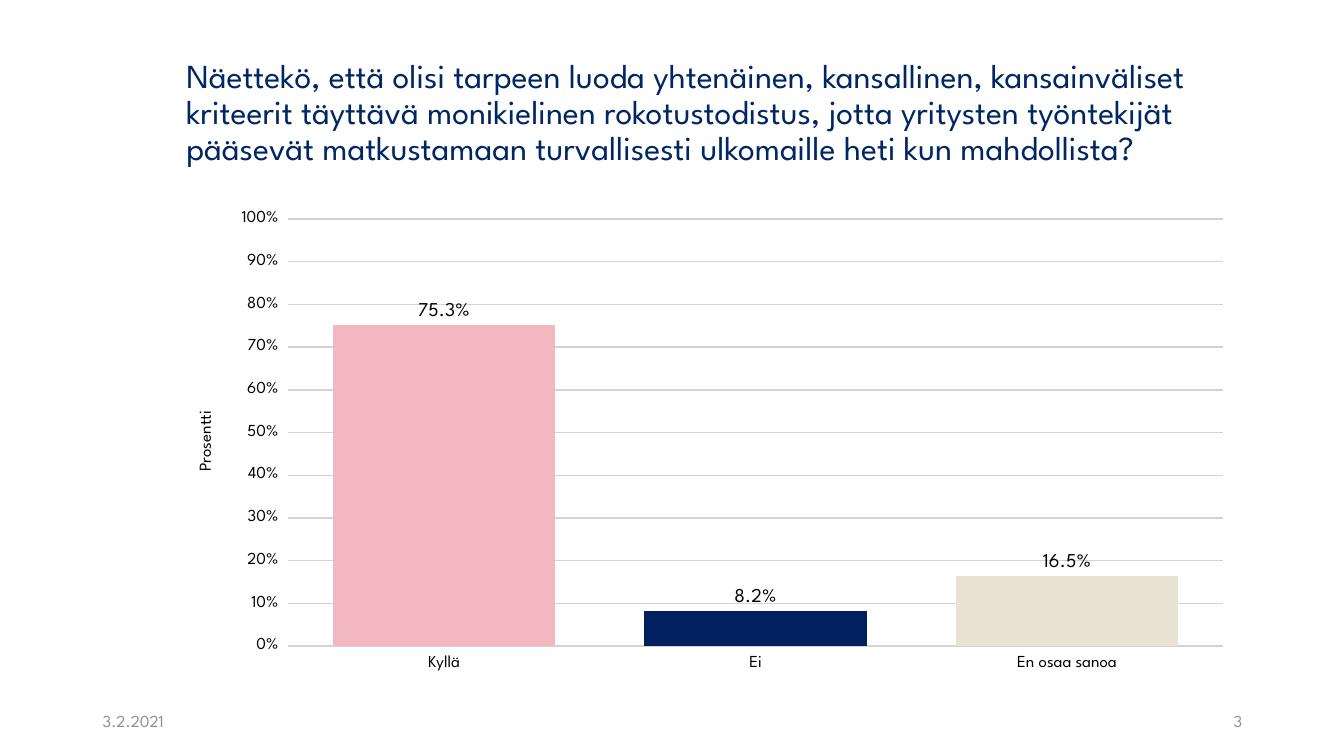
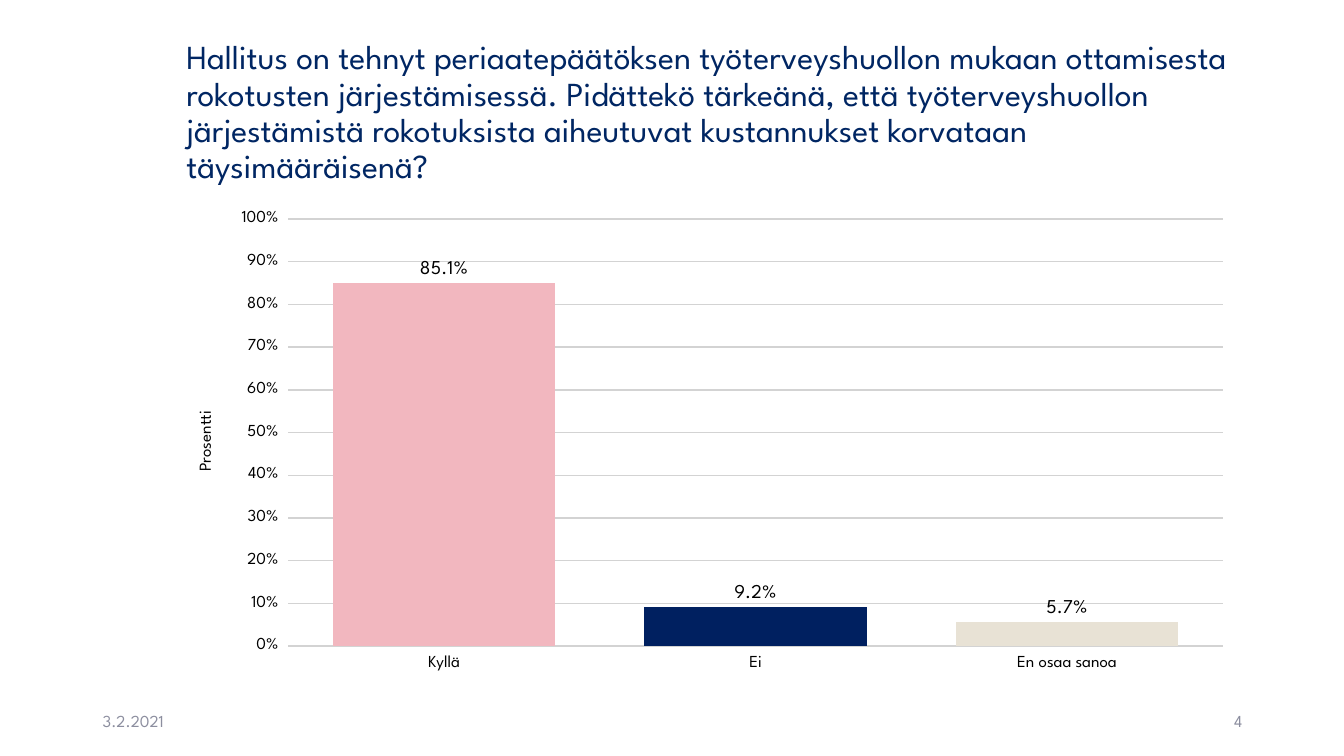
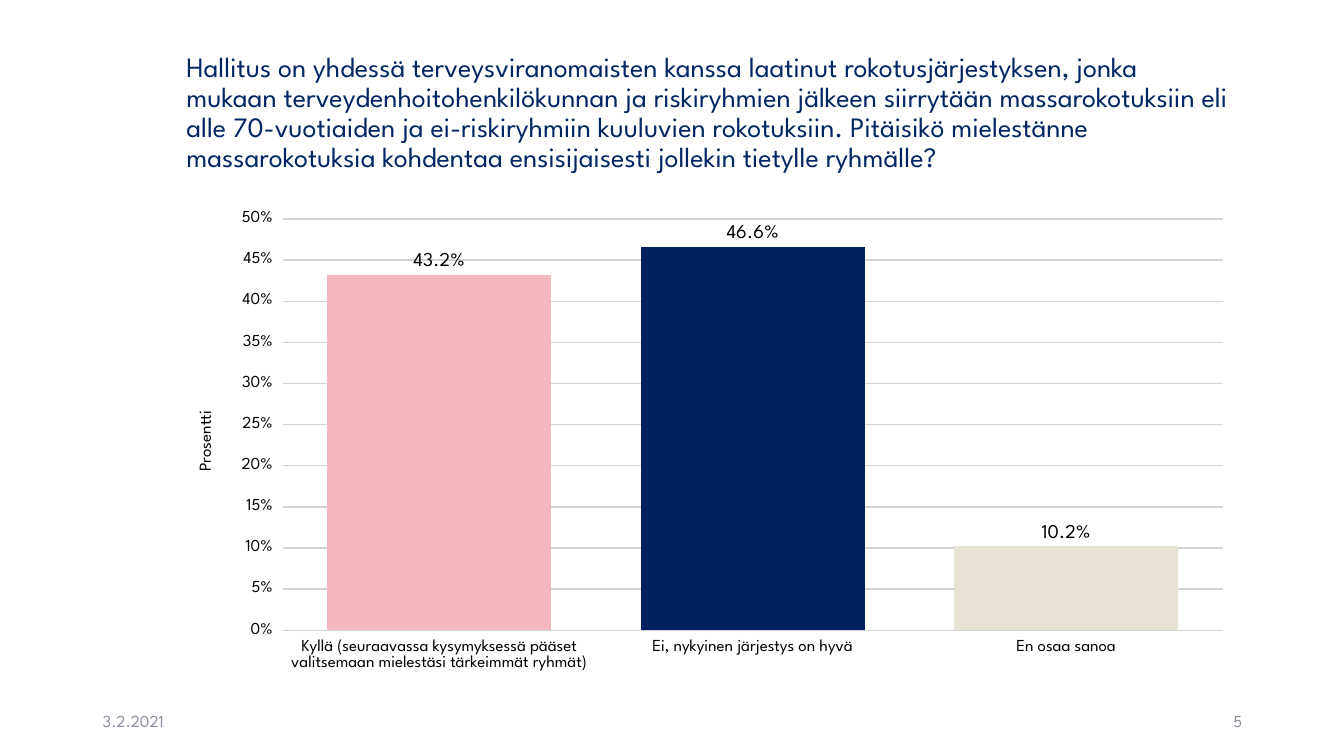
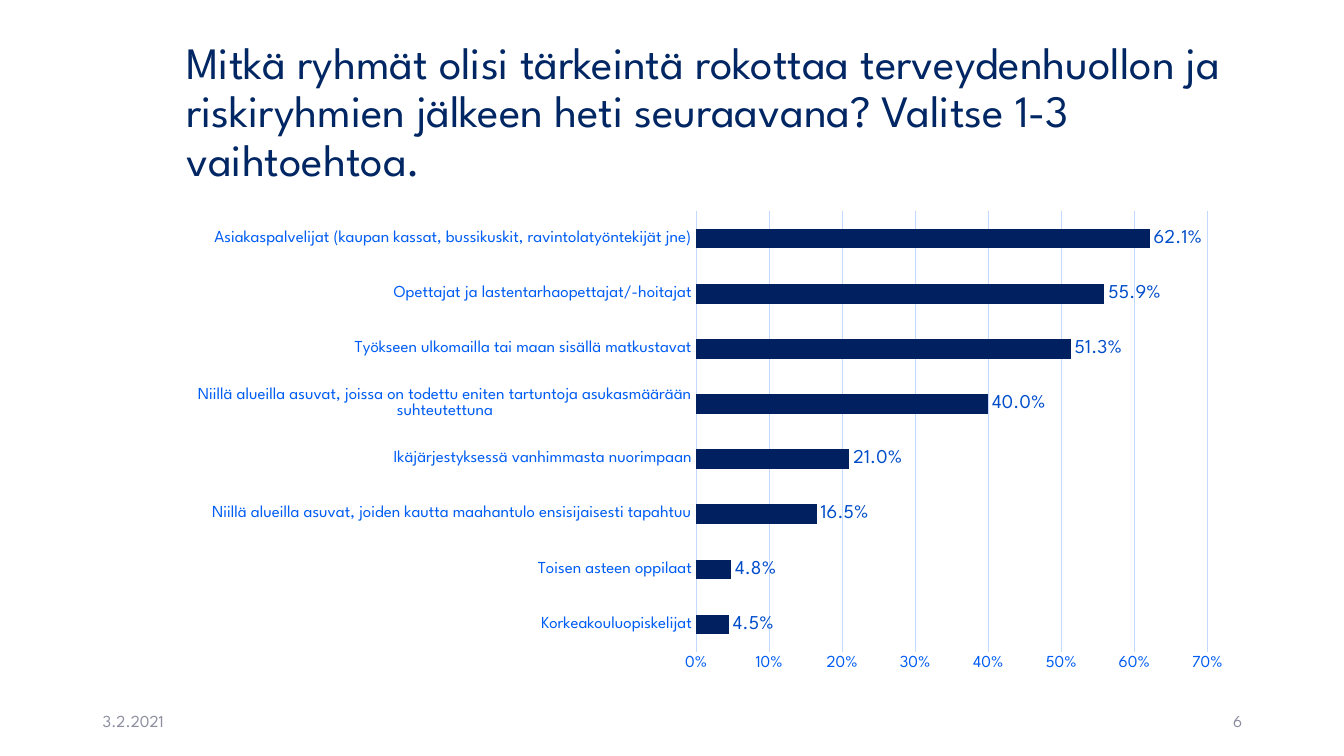
from dataclasses import dataclass
from typing import Any, Optional

from pptx import Presentation
from pptx.chart.axis import _BaseAxis
from pptx.chart.data import CategoryChartData
from pptx.dml.color import RGBColor
from pptx.enum.chart import XL_CHART_TYPE, XL_LABEL_POSITION, XL_TICK_MARK
from pptx.enum.text import MSO_ANCHOR, PP_ALIGN
from pptx.slide import Slide
from pptx.text.text import Font
from pptx.util import Inches, Pt

FONT_NAME = "League Spartan"
TITLE_NAVY = RGBColor(0x00, 0x26, 0x63)
FOOTER_GREY = RGBColor(0x8C, 0x8E, 0x9F)
BAR_NAVY = RGBColor(0x00, 0x20, 0x60)
PINK = RGBColor(0xF2, 0xB7, 0xBF)
SAND = RGBColor(0xE8, 0xE2, 0xD5)
BLACK = RGBColor(0x00, 0x00, 0x00)
GRID_GREY = RGBColor(0xD3, 0xD3, 0xD3)
GRID_BLUE = RGBColor(0xC1, 0xD9, 0xFF)
AXIS_BLUE = RGBColor(0x00, 0x5D, 0xF3)
LABEL_BLUE = RGBColor(0x00, 0x4D, 0xCA)

SURVEY_DATE = "3.2.2021"
FIRST_PAGE = 3


@dataclass(frozen=True)
class Box:
    left: float
    top: float
    width: float
    height: float

    def lengths(self) -> tuple:
        return tuple(Inches(v) for v in (self.left, self.top, self.width, self.height))


@dataclass(frozen=True)
class ChartStyle:
    chart_type: XL_CHART_TYPE
    gap_width: int
    bar_colors: tuple[RGBColor, ...]
    axis_color: RGBColor
    label_color: RGBColor
    grid_color: RGBColor
    grid_width: float
    tick_mark: XL_TICK_MARK
    value_title: Optional[str] = None
    category_line: Optional[RGBColor] = None


@dataclass(frozen=True)
class Question:
    title: str
    title_size: int
    answers: dict[str, float]
    maximum: float
    major_unit: float
    style: ChartStyle


TITLE_BOX = Box(1.75, 0.4, 10.59, 1.45)
DATE_BOX = Box(0.92, 6.95, 3, 0.4)
PAGE_BOX = Box(9.42, 6.95, 3, 0.4)
CHART_BOX = Box(1.75, 2, 10.59, 4.76)

COLUMNS = ChartStyle(
    XL_CHART_TYPE.COLUMN_CLUSTERED, 40, (PINK, BAR_NAVY, SAND), BLACK, BLACK,
    GRID_GREY, 1, XL_TICK_MARK.OUTSIDE, value_title="Prosentti",
)
BARS = ChartStyle(
    XL_CHART_TYPE.BAR_CLUSTERED, 182, (BAR_NAVY,), AXIS_BLUE, LABEL_BLUE,
    GRID_BLUE, 0.75, XL_TICK_MARK.NONE, category_line=GRID_BLUE,
)

QUESTIONS = (
    Question(
        "Näettekö, että olisi tarpeen luoda yhtenäinen, kansallinen, kansainväliset "
        "kriteerit täyttävä monikielinen rokotustodistus, jotta yritysten työntekijät "
        "pääsevät matkustamaan turvallisesti ulkomaille heti kun mahdollista?",
        24,
        {"Kyllä": 0.753, "Ei": 0.082, "En osaa sanoa": 0.165},
        1, 0.1, COLUMNS,
    ),
    Question(
        "Hallitus on tehnyt periaatepäätöksen työterveyshuollon mukaan ottamisesta "
        "rokotusten järjestämisessä. Pidättekö tärkeänä, että työterveyshuollon "
        "järjestämistä rokotuksista aiheutuvat kustannukset korvataan täysimääräisenä?",
        24,
        {"Kyllä": 0.851, "Ei": 0.092, "En osaa sanoa": 0.057},
        1, 0.1, COLUMNS,
    ),
    Question(
        "Hallitus on yhdessä terveysviranomaisten kanssa laatinut rokotusjärjestyksen, "
        "jonka mukaan terveydenhoitohenkilökunnan ja riskiryhmien jälkeen siirrytään "
        "massarokotuksiin eli alle 70-vuotiaiden ja ei-riskiryhmiin kuuluvien "
        "rokotuksiin. Pitäisikö mielestänne massarokotuksia kohdentaa ensisijaisesti "
        "jollekin tietylle ryhmälle?",
        20,
        {
            "Kyllä (seuraavassa kysymyksessä pääset valitsemaan mielestäsi "
            "tärkeimmät ryhmät)": 0.432,
            "Ei, nykyinen järjestys on hyvä": 0.466,
            "En osaa sanoa": 0.102,
        },
        0.5, 0.05, COLUMNS,
    ),
    Question(
        "Mitkä ryhmät olisi tärkeintä rokottaa terveydenhuollon ja riskiryhmien "
        "jälkeen heti seuraavana? Valitse 1-3 vaihtoehtoa.",
        32,
        {
            "Korkeakouluopiskelijat": 0.045,
            "Toisen asteen oppilaat": 0.048,
            "Niillä alueilla asuvat, joiden kautta maahantulo ensisijaisesti "
            "tapahtuu": 0.165,
            "Ikäjärjestyksessä vanhimmasta nuorimpaan": 0.21,
            "Niillä alueilla asuvat, joissa on todettu eniten tartuntoja "
            "asukasmäärään suhteutettuna": 0.4,
            "Työkseen ulkomailla tai maan sisällä matkustavat": 0.513,
            "Opettajat ja lastentarhaopettajat/-hoitajat": 0.559,
            "Asiakaspalvelijat (kaupan kassat, bussikuskit, ravintolatyöntekijät "
            "jne)": 0.621,
        },
        0.7, 0.1, BARS,
    ),
)


def set_attributes(target: Any, values: dict[str, Any]) -> None:
    for name, value in values.items():
        setattr(target, name, value)


def style_font(font: Font, size: float, color: RGBColor) -> None:
    set_attributes(font, {"name": FONT_NAME, "size": Pt(size), "bold": False})
    font.color.rgb = color


def add_text(slide: Slide, box: Box, text: str, size: float, color: RGBColor,
             alignment: PP_ALIGN = PP_ALIGN.LEFT, line_spacing: float = 1.0) -> None:
    text_frame = slide.shapes.add_textbox(*box.lengths()).text_frame
    set_attributes(text_frame, {"word_wrap": True, "vertical_anchor": MSO_ANCHOR.MIDDLE})
    paragraph = text_frame.paragraphs[0]
    set_attributes(paragraph, {"alignment": alignment, "line_spacing": line_spacing})
    run = paragraph.add_run()
    run.text = text
    style_font(run.font, size, color)


def style_axis(axis: _BaseAxis, style: ChartStyle, line: Optional[RGBColor]) -> None:
    set_attributes(axis, {
        "major_tick_mark": style.tick_mark,
        "minor_tick_mark": XL_TICK_MARK.NONE,
    })
    style_font(axis.tick_labels.font, 12, style.axis_color)
    if line is None:
        axis.format.line.fill.background()
    else:
        axis.format.line.color.rgb = line
        axis.format.line.width = Pt(0.75)


def add_answer_chart(slide: Slide, question: Question) -> None:
    style = question.style
    data = CategoryChartData(number_format="0.0%")
    data.categories = list(question.answers)
    data.add_series("Series 1", list(question.answers.values()))
    chart = slide.shapes.add_chart(style.chart_type, *CHART_BOX.lengths(), data).chart
    set_attributes(chart, {"has_legend": False, "has_title": False})
    style_font(chart.font, 11, style.axis_color)

    style_axis(chart.category_axis, style, style.category_line)
    value_axis = chart.value_axis
    style_axis(value_axis, style, None)
    set_attributes(value_axis, {
        "minimum_scale": 0,
        "maximum_scale": question.maximum,
        "major_unit": question.major_unit,
        "has_major_gridlines": True,
    })
    set_attributes(value_axis.tick_labels, {
        "number_format": "0%", "number_format_is_linked": False,
    })
    grid_line = value_axis.major_gridlines.format.line
    grid_line.color.rgb = style.grid_color
    grid_line.width = Pt(style.grid_width)
    if style.value_title:
        paragraph = value_axis.axis_title.text_frame.paragraphs[0]
        run = paragraph.add_run()
        run.text = style.value_title
        style_font(run.font, 12, style.axis_color)

    plot = chart.plots[0]
    set_attributes(plot, {
        "gap_width": style.gap_width,
        "vary_by_categories": False,
        "has_data_labels": True,
    })
    set_attributes(plot.data_labels, {
        "show_value": True,
        "position": XL_LABEL_POSITION.OUTSIDE_END,
        "number_format": "0.0%",
        "number_format_is_linked": False,
    })
    style_font(plot.data_labels.font, 14, style.label_color)
    series = plot.series[0]
    if len(style.bar_colors) == 1:
        bars = [series]
    else:
        bars = [series.points[index] for index in range(len(style.bar_colors))]
    for bar, color in zip(bars, style.bar_colors):
        bar.format.fill.solid()
        bar.format.fill.fore_color.rgb = color


def main() -> None:
    presentation = Presentation()
    set_attributes(presentation, {
        "slide_width": Inches(13.33), "slide_height": Inches(7.5),
    })
    blank_layout = presentation.slide_layouts[6]
    for page, question in enumerate(QUESTIONS, FIRST_PAGE):
        slide = presentation.slides.add_slide(blank_layout)
        add_text(slide, TITLE_BOX, question.title, question.title_size, TITLE_NAVY,
                 line_spacing=0.9)
        add_text(slide, DATE_BOX, SURVEY_DATE, 12, FOOTER_GREY)
        add_text(slide, PAGE_BOX, str(page), 12, FOOTER_GREY, PP_ALIGN.RIGHT)
        add_answer_chart(slide, question)
    presentation.save("out.pptx")


if __name__ == "__main__":
    main()
